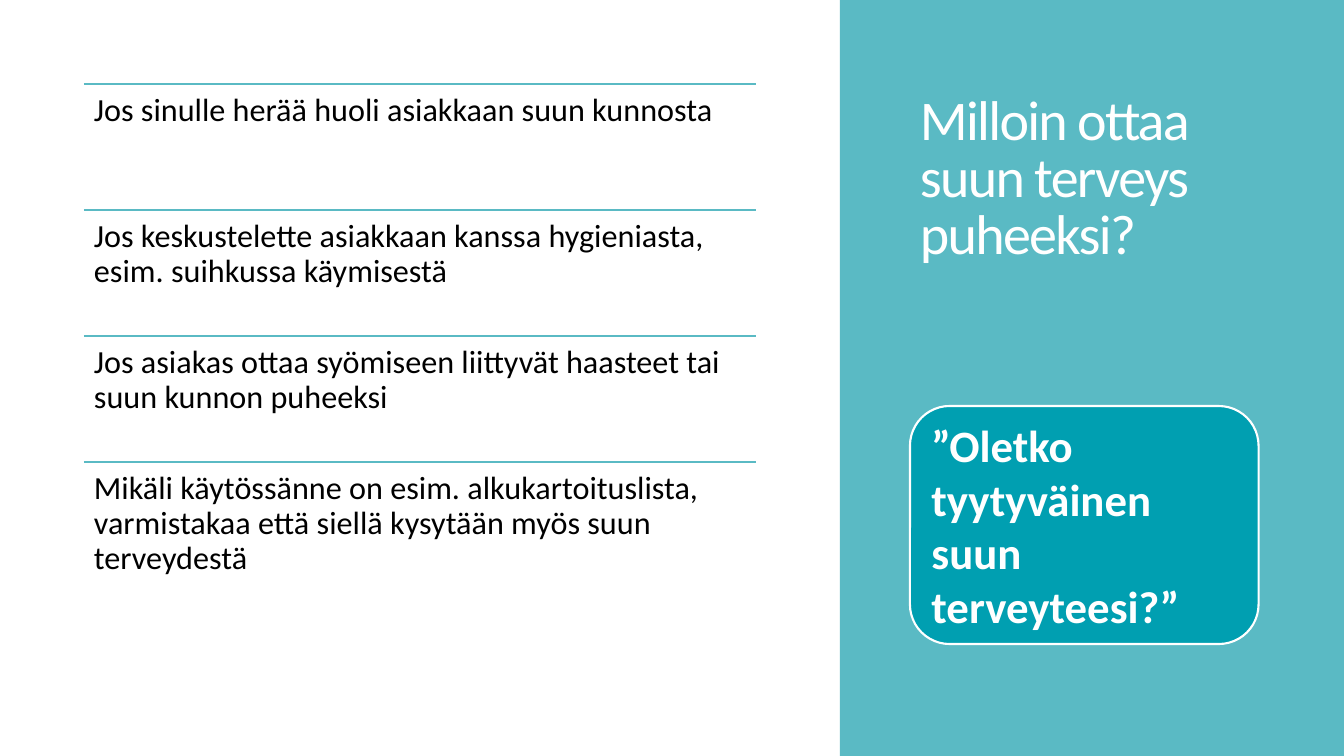
import pptx
import pptx.util
import pptx.dml.color
import pptx.enum.shapes
import pptx.enum.text

Pt = pptx.util.Pt
RGB = pptx.dml.color.RGBColor
SHAPE = pptx.enum.shapes.MSO_SHAPE
ANCHOR = pptx.enum.text.MSO_ANCHOR

TEAL = RGB(0x5A, 0xBA, 0xC4)
DEEP = RGB(0x00, 0x9F, 0xB1)
WHITE = RGB(0xFF, 0xFF, 0xFF)
BLACK = RGB(0x00, 0x00, 0x00)

CASES = [
    "Jos sinulle herää huoli asiakkaan suun kunnosta",
    "Jos keskustelette asiakkaan kanssa hygieniasta, esim. suihkussa käymisestä",
    "Jos asiakas ottaa syömiseen liittyvät haasteet tai suun kunnon puheeksi",
    "Mikäli käytössänne on esim. alkukartoituslista, varmistakaa että siellä "
    "kysytään myös suun terveydestä",
]


def write(shape, text, size, color, anchor, lead=1.0, bold=False):
    frame = shape.text_frame
    frame.word_wrap = True
    frame.vertical_anchor = anchor
    para = frame.paragraphs[0]
    para.alignment = pptx.enum.text.PP_ALIGN.LEFT
    para.line_spacing = lead
    run = para.add_run()
    run.text = text
    run.font.name = "Calibri"
    run.font.size = Pt(size)
    run.font.bold = bold
    run.font.color.rgb = color
    return run


def add_block(slide, kind, left, top, width, height, fill):
    block = slide.shapes.add_shape(kind, Pt(left), Pt(top), Pt(width), Pt(height))
    block.shadow.inherit = False
    block.fill.solid()
    block.fill.fore_color.rgb = fill
    block.line.fill.background()
    return block


def add_rule(slide, left, top, width):
    rule = slide.shapes.add_connector(
        pptx.enum.shapes.MSO_CONNECTOR.STRAIGHT,
        Pt(left), Pt(top), Pt(left + width), Pt(top))
    rule.line.color.rgb = TEAL
    rule.line.width = Pt(1)
    props = rule._element.spPr
    props.append(pptx.oxml.parse_xml(
        '<a:effectLst xmlns:a="http://schemas.openxmlformats.org/drawingml/2006/main"/>'))


def add_list(slide, left, top, width, height):
    step = height / len(CASES)
    for i, case in enumerate(CASES):
        y = top + i * step
        add_rule(slide, left, y, width)
        box = slide.shapes.add_textbox(Pt(left), Pt(y), Pt(width), Pt(step))
        frame = box.text_frame
        frame.margin_left = frame.margin_right = Pt(7.2)
        frame.margin_top = frame.margin_bottom = Pt(7.2)
        write(box, case, 23, BLACK, ANCHOR.TOP, 0.9)


def add_panel(slide, left, top, width, height):
    add_block(slide, SHAPE.RECTANGLE, left, top, width, height, TEAL)

    title = slide.shapes.add_textbox(
        Pt(left + 50), Pt(top + 42.5), Pt(width - 93.5), Pt(151))
    run = write(title, "Milloin ottaa suun terveys puheeksi?",
                40, WHITE, ANCHOR.BOTTOM, 0.85)
    run.font._element.set("spc", "-120")

    card = add_block(slide, SHAPE.ROUNDED_RECTANGLE,
                     left + 50, top + 290, width - 111, 170, DEEP)
    card.line.color.rgb = WHITE
    card.line.width = Pt(1.5)
    write(card, "”Oletko tyytyväinen suun terveyteesi?”",
          32, WHITE, ANCHOR.MIDDLE, bold=True)


def main():
    deck = pptx.Presentation()
    deck.slide_width = Pt(960)
    deck.slide_height = Pt(540)
    slide = deck.slides.add_slide(deck.slide_layouts[6])
    add_panel(slide, 600, 0, 360, 540)
    add_list(slide, 60, 60, 480, 360)
    deck.save("out.pptx")


if __name__ == "__main__":
    main()
